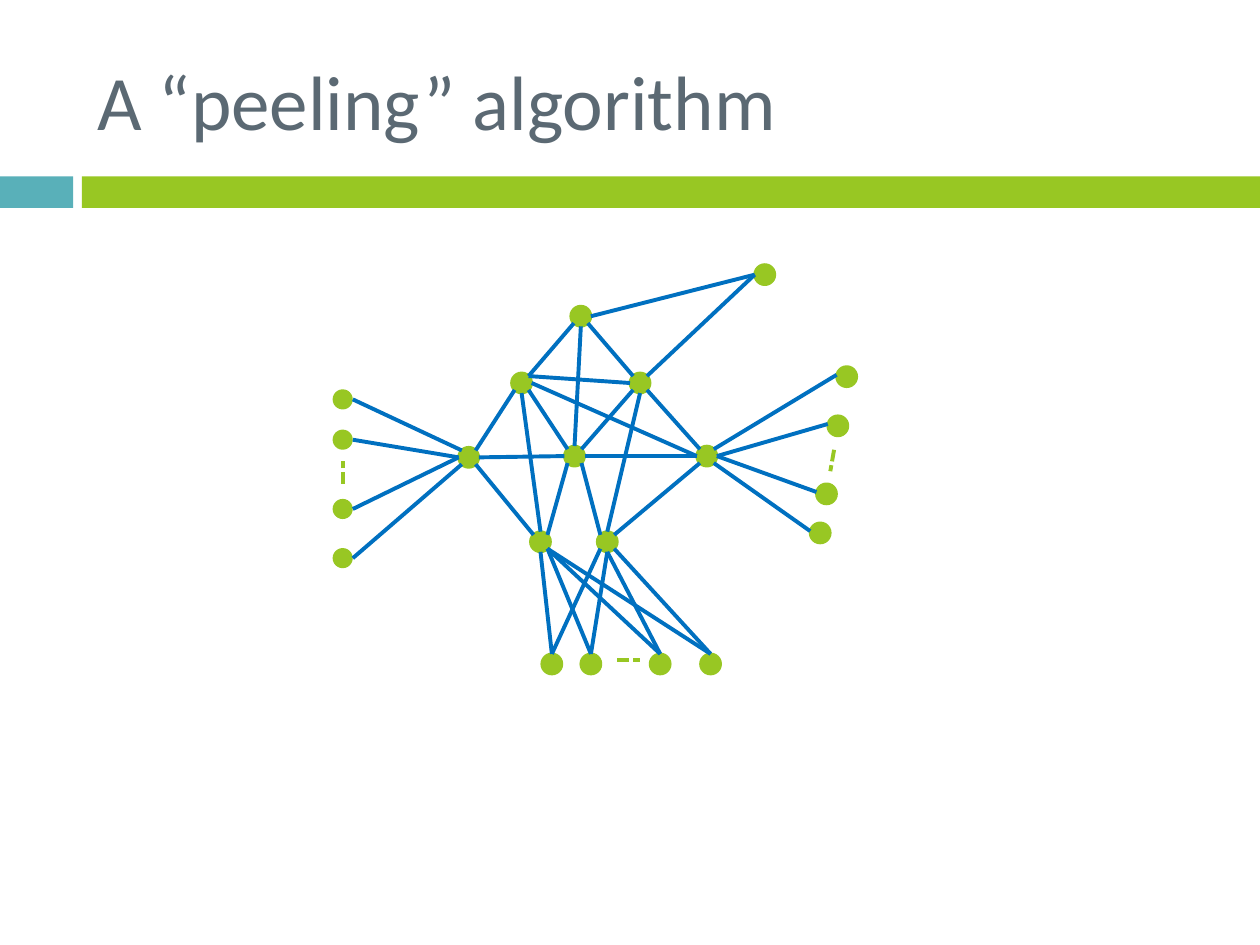
from pptx import Presentation
from pptx.dml.color import RGBColor
from pptx.enum.dml import MSO_LINE
from pptx.enum.shapes import MSO_CONNECTOR, MSO_SHAPE
from pptx.enum.text import MSO_ANCHOR, MSO_AUTO_SIZE, PP_ALIGN
from pptx.oxml.ns import qn
from pptx.util import Inches, Pt
from lxml import etree

OVAL, RECTANGLE = MSO_SHAPE.OVAL, MSO_SHAPE.RECTANGLE
STRAIGHT = MSO_CONNECTOR.STRAIGHT
DOTTED = MSO_LINE.SQUARE_DOT
COLORS = {"teal": "59B0B9", "green": "98C723", "blue": "0070C0", "title": "5B6973"}

deck = Presentation()
deck.slide_width, deck.slide_height = Inches(10), Inches(7.5)
COLUMN = deck.slide_width / 1000
ROW = deck.slide_height / 750
page = deck.slides.add_slide(deck.slide_layouts[5])


def add_filled(kind, left, top, width, height, color, outline=0):
    shape = page.shapes.add_shape(
        kind, round(left * COLUMN), round(top * ROW), round(width * COLUMN), round(height * ROW)
    )
    shape.shadow.inherit = False
    shape.fill.solid()
    shape.fill.fore_color.rgb = RGBColor.from_string(COLORS[color])
    if outline:
        shape.line.color.rgb = RGBColor.from_string(COLORS[color])
        shape.line.width = Pt(outline)
    else:
        shape.line.fill.background()


def add_line(start, end, color, dash=None):
    line = page.shapes.add_connector(
        STRAIGHT,
        round(start[0] * COLUMN), round(start[1] * ROW),
        round(end[0] * COLUMN), round(end[1] * ROW),
    )
    line.line.color.rgb = RGBColor.from_string(COLORS[color])
    line.line.width = Pt(2.25)
    if dash:
        line.line.dash_style = dash
    etree.SubElement(line._element.spPr, qn("a:effectLst"))


add_filled(RECTANGLE, 0, 140, 58, 25, "teal")
add_filled(RECTANGLE, 65, 140, 935, 25, "green")

title = page.shapes.title
title.left, title.top = round(67 * COLUMN), round(25 * ROW)
title.width, title.height = round(892 * COLUMN), round(108 * ROW)
frame = title.text_frame
frame.word_wrap = True
frame.auto_size = MSO_AUTO_SIZE.NONE
frame.vertical_anchor = MSO_ANCHOR.MIDDLE
para = frame.paragraphs[0]
para.alignment = PP_ALIGN.LEFT
span = para.add_run()
span.text = "A “peeling” algorithm"
span.font.name = "Calibri"
span.font.size = Pt(44)
span.font.color.rgb = RGBColor.from_string(COLORS["title"])

RADIUS = 8
DIAGONAL = 5.5
SIDES = {
    "n": (0, -RADIUS), "s": (0, RADIUS), "w": (-RADIUS, 0), "e": (RADIUS, 0),
    "nw": (-DIAGONAL, -DIAGONAL), "ne": (DIAGONAL, -DIAGONAL),
    "sw": (-DIAGONAL, DIAGONAL), "se": (DIAGONAL, DIAGONAL),
    "tilted w": (-RADIUS, -1.5),
}

nodes = {
    "top": (461, 251), "far": (607, 218),
    "upper left": (414, 304), "upper right": (508, 304),
    "left": (372, 363), "middle": (456, 362), "right": (561, 362),
    "lower left": (429, 430), "lower right": (482, 430),
}
left_leaves = [(272, y) for y in (317, 349, 404, 443)]
bottom_leaves = [(x, 527) for x in (438, 469, 524, 564)]
right_leaves = [(672, 299), (665, 338), (656, 392), (651, 423)]
for group, leaves in (("left", left_leaves), ("bottom", bottom_leaves), ("right", right_leaves)):
    for index, center in enumerate(leaves):
        nodes[f"{group} leaf {index}"] = center

edges = [
    ("upper left", "ne", "top", "sw"), ("upper right", "nw", "top", "se"),
    ("top", "s", "middle", "n"), ("top", "e", "far", "w"),
    ("upper right", "ne", "far", "w"), ("upper left", "ne", "upper right", "w"),
    ("upper left", "sw", "left", "ne"), ("upper left", "se", "middle", "nw"),
    ("upper left", "e", "right", "w"), ("upper left", "s", "lower left", "n"),
    ("upper right", "sw", "middle", "ne"), ("upper right", "se", "right", "nw"),
    ("upper right", "s", "lower right", "n"), ("left", "e", "middle", "w"),
    ("middle", "e", "right", "w"), ("left", "se", "lower left", "nw"),
    ("middle", "sw", "lower left", "ne"), ("middle", "se", "lower right", "nw"),
    ("right", "sw", "lower right", "ne"),
]
fans = [
    ("left", ("nw", "w", "w", "sw"), "left leaf", "e"),
    ("right", ("ne", "e", "e", "se"), "right leaf", "tilted w"),
    ("lower left", ("s", "se", "se", "se"), "bottom leaf", "n"),
    ("lower right", ("sw", "s", "s", "se"), "bottom leaf", "n"),
]
for hub, hub_sides, leaf, leaf_side in fans:
    for index, hub_side in enumerate(hub_sides):
        edges.append((hub, hub_side, f"{leaf} {index}", leaf_side))

for name, (x, y) in nodes.items():
    outline = 0 if name.startswith("left leaf") else 1.5
    add_filled(OVAL, x - RADIUS, y - RADIUS, 2 * RADIUS, 2 * RADIUS, "green", outline)

for start, start_side, end, end_side in edges:
    ends = [
        (nodes[name][0] + SIDES[side][0], nodes[name][1] + SIDES[side][1])
        for name, side in ((start, start_side), (end, end_side))
    ]
    add_line(*ends, "blue")

for start, end in (((272, 384), (272, 366)), ((490, 524), (508, 524)), ((662, 357), (659, 374))):
    add_line(start, end, "green", DOTTED)

deck.save("out.pptx")
